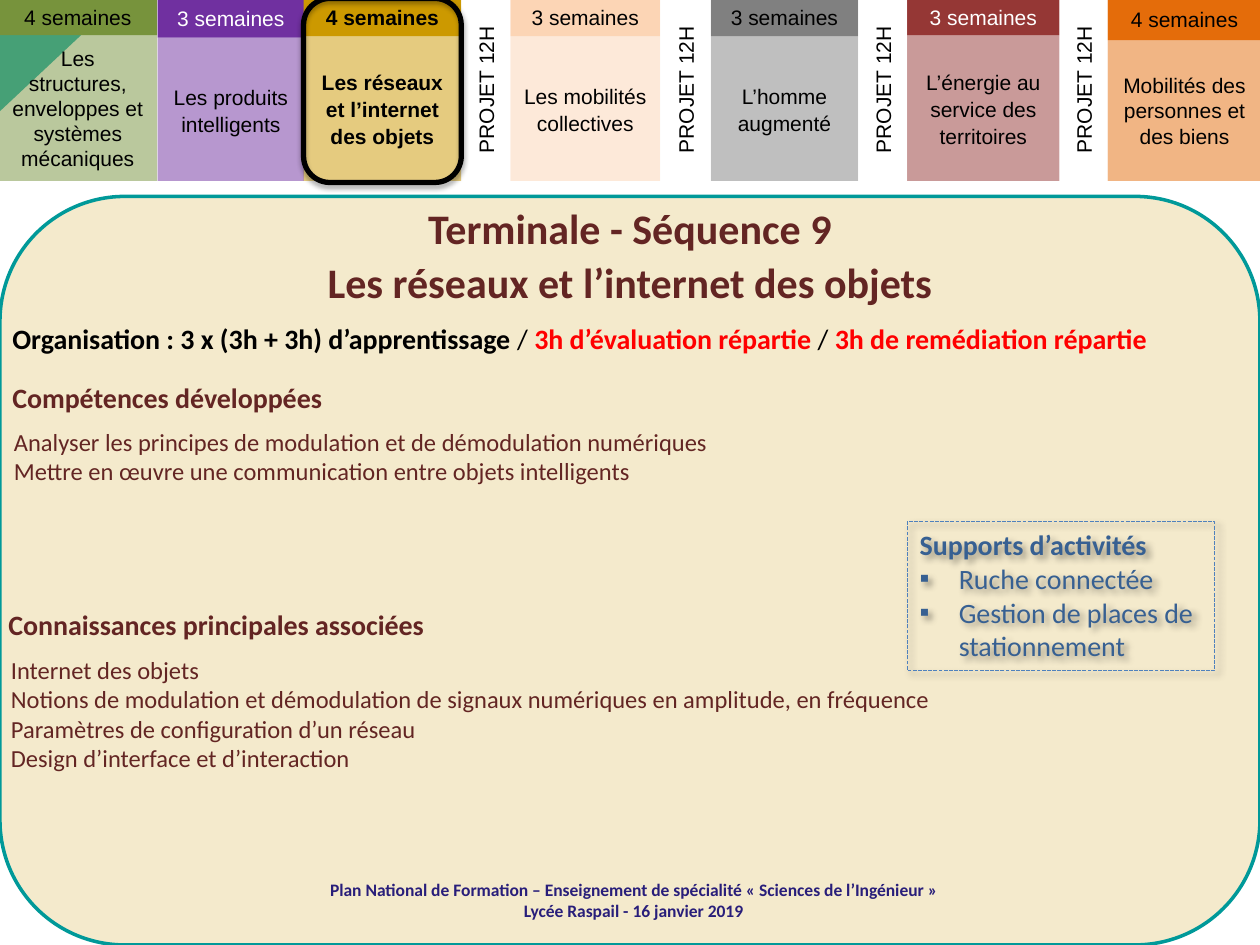
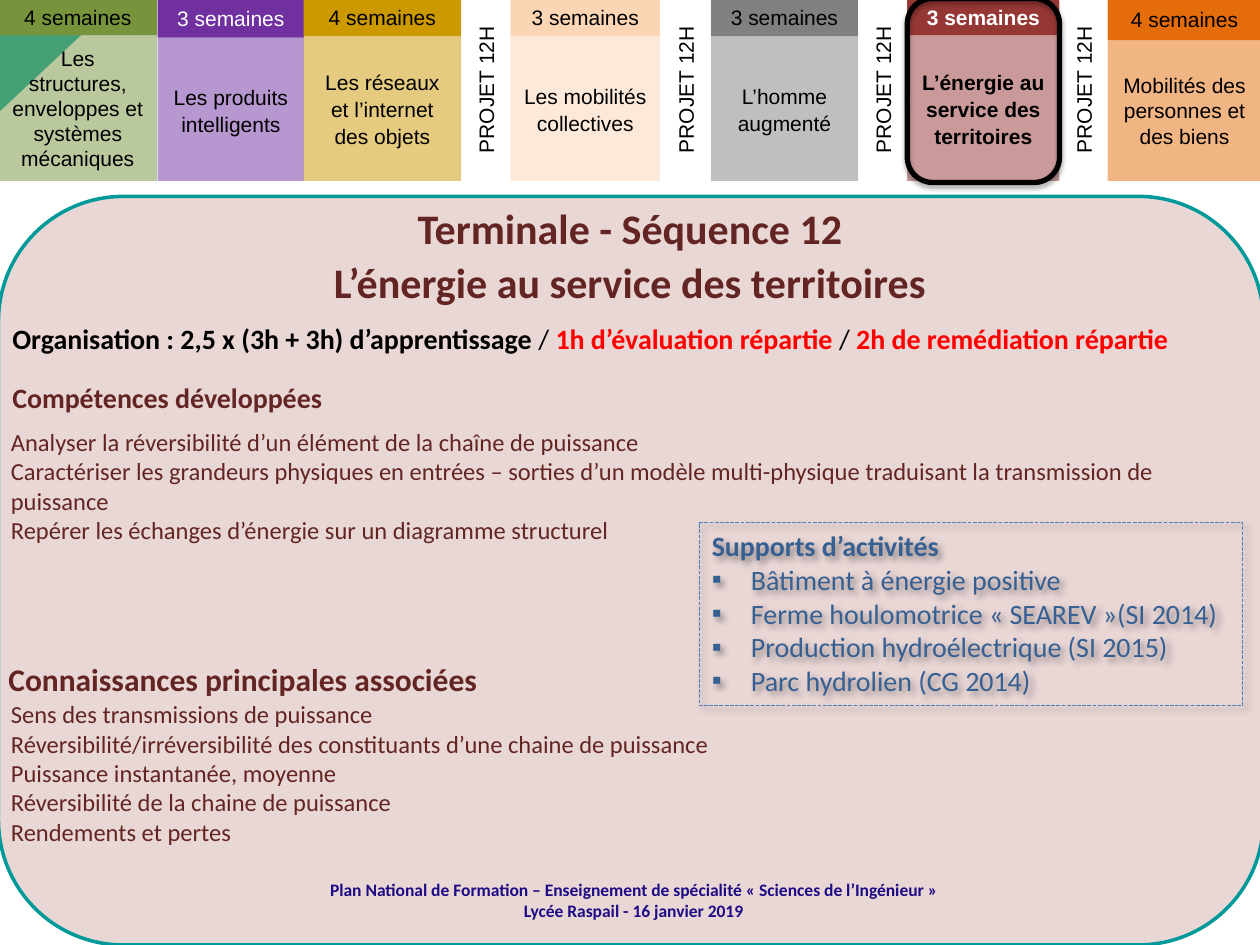
from dataclasses import dataclass

from lxml.etree import SubElement
from pptx import Presentation
from pptx.dml.color import RGBColor
from pptx.enum.dml import MSO_LINE
from pptx.enum.shapes import MSO_SHAPE
from pptx.enum.text import MSO_ANCHOR, PP_ALIGN
from pptx.oxml.ns import qn
from pptx.util import Cm, Pt

WIDTH, HEIGHT = 25.4, 19.05
BAND_TOP, BAND_BOTTOM = -0.03, 3.65
PANEL_TOP = 3.96


@dataclass(frozen=True)
class Theme:
    body_font: str = "Calibri"
    band_font: str = "Arial"
    title_size: int = 24
    heading_size: int = 16
    large_heading_size: int = 18
    text_size: int = 14
    band_size: int = 12
    footer_size: int = 10
    black: str = "000000"
    white: str = "FFFFFF"
    maroon: str = "632523"
    red: str = "FF0000"
    navy: str = "000099"
    support_text: str = "376092"
    support_line: str = "4F81BD"
    panel_line: str = "009999"
    corner: str = "16AEB2"


@dataclass(frozen=True)
class Column:
    left: float
    width: float
    head_height: float
    color: str
    weeks: int
    topic: str
    head_text: str = Theme.black
    spacing: float = 1.07

    @property
    def right(self):
        return self.left + self.width


@dataclass(frozen=True)
class Sequence:
    number: int
    column: int
    panel: tuple  # left, width
    lessons: str
    evaluation: str
    remediation: str
    skills: tuple
    skills_box: tuple  # left, height
    knowledge: tuple
    knowledge_heading: tuple  # top, height, size
    knowledge_box: tuple  # top, height
    supports: tuple
    supports_box: tuple  # left, top, width, height


COLUMNS = (
    Column(-0.03, 3.2, 0.74, "77933C", 4, "Les structures, enveloppes et systèmes mécaniques", spacing=1.0),
    Column(3.18, 2.95, 0.79, "7030A0", 3, "Les produits intelligents", Theme.white),
    Column(6.12, 3.18, 0.76, "CC9900", 4, "Les réseaux et l’internet des objets"),
    Column(10.29, 3.02, 0.76, "FCD5B5", 3, "Les mobilités collectives"),
    Column(14.33, 2.97, 0.76, "808080", 3, "L’homme augmenté"),
    Column(18.29, 3.07, 0.74, "953735", 3, "L’énergie au service des territoires", Theme.white),
    Column(22.33, 3.1, 0.84, "E46C0A", 4, "Mobilités des personnes et des biens", spacing=1.0),
)

SEQUENCES = (
    Sequence(
        number=9, column=2, panel=(0, WIDTH),
        lessons="3", evaluation="3h", remediation="3h",
        skills=("Analyser les principes de modulation et de démodulation numériques",
                "Mettre en œuvre une communication entre objets intelligents"),
        skills_box=(0.03, 1.45),
        knowledge=("Internet des objets",
                   "Notions de modulation et démodulation de signaux numériques en amplitude, en fréquence",
                   "Paramètres de configuration d’un réseau",
                   "Design d’interface et d’interaction"),
        knowledge_heading=(12.12, 0.94, Theme.heading_size),
        knowledge_box=(13.08, 2.64),
        supports=("Ruche connectée", "Gestion de places de stationnement"),
        supports_box=(18.29, 10.52, 6.2, 3),
    ),
    Sequence(
        number=12, column=5, panel=(-0.03, 25.5),
        lessons="2,5", evaluation="1h", remediation="2h",
        skills=("Analyser la réversibilité d’un élément de la chaîne de puissance",
                "Caractériser les grandeurs physiques en entrées – sorties d’un modèle "
                "multi-physique traduisant la transmission de puissance",
                "Repérer les échanges d’énergie sur un diagramme structurel"),
        skills_box=(-0.03, 2.64),
        knowledge=("Sens des transmissions de puissance",
                   "Réversibilité/irréversibilité des constituants d’une chaine de puissance",
                   "Puissance instantanée, moyenne",
                   "Réversibilité de la chaine de puissance",
                   "Rendements et pertes"),
        knowledge_heading=(13.18, 1.02, Theme.large_heading_size),
        knowledge_box=(13.97, 3.25),
        supports=("Bâtiment à énergie positive",
                  "Ferme houlomotrice « SEAREV »(SI 2014)",
                  "Production hydroélectrique (SI 2015)",
                  "Parc hydrolien (CG 2014)"),
        supports_box=(14.1, 10.54, 10.95, 3.68),
    ),
)


class SlideBuilder:
    def __init__(self, presentation, theme):
        self.presentation = presentation
        self.theme = theme
        self.slide = None

    def new_slide(self):
        self.slide = self.presentation.slides.add_slide(self.presentation.slide_layouts[6])

    def shape(self, kind, left, top, width, height, fill=None, opacity=100, line=None, line_width=1):
        shape = self.slide.shapes.add_shape(kind, Cm(left), Cm(top), Cm(width), Cm(height))
        shape.shadow.inherit = False
        if fill:
            shape.fill.solid()
            shape.fill.fore_color.rgb = RGBColor.from_string(fill)
            if opacity < 100:
                color = shape.element.spPr.find(qn("a:solidFill"))[0]
                SubElement(color, qn("a:alpha"), val=str(opacity * 1000))
        else:
            shape.fill.background()
        if line:
            shape.line.color.rgb = RGBColor.from_string(line)
            shape.line.width = Pt(line_width)
        else:
            shape.line.fill.background()
        return shape

    def drop_shadow(self, shape, opacity, blur, distance, angle):
        effects = shape.element.spPr.find(qn("a:effectLst"))
        shadow = SubElement(effects, qn("a:outerShdw"), blurRad=str(Pt(blur)), dist=str(Pt(distance)),
                            dir=str(angle * 60000), algn="ctr", rotWithShape="0")
        color = SubElement(shadow, qn("a:srgbClr"), val=self.theme.black)
        SubElement(color, qn("a:alpha"), val=str(opacity * 1000))

    def style(self, paragraph, size, color=None, bold=None, font=None, align=PP_ALIGN.LEFT, spacing=None):
        paragraph.alignment = align
        if spacing:
            paragraph.line_spacing = spacing
        paragraph.font.name = font or self.theme.body_font
        paragraph.font.size = Pt(size)
        paragraph.font.bold = bold
        if color:
            paragraph.font.color.rgb = RGBColor.from_string(color)

    def set_lines(self, shape, lines, anchor=MSO_ANCHOR.TOP, **style):
        """Fill a shape with one paragraph per line and return the paragraphs."""
        frame = shape.text_frame
        frame.word_wrap = True
        frame.vertical_anchor = anchor
        frame.text = "\n".join(lines)
        for paragraph in frame.paragraphs:
            self.style(paragraph, **style)
        return frame.paragraphs

    def text(self, left, top, width, height, lines, **style):
        box = self.slide.shapes.add_textbox(Cm(left), Cm(top), Cm(width), Cm(height))
        return self.set_lines(box, lines, **style)

    def heading(self, left, top, height, text, size):
        self.text(left, top, WIDTH, height, [text], size=size, color=self.theme.maroon, bold=True)

    def items(self, left, top, height, lines):
        self.text(left, top, WIDTH, height, lines, size=self.theme.text_size, color=self.theme.maroon)

    def band_cell(self, left, top, width, height, fill, text, opacity=100, color=None, bold=False, spacing=None):
        cell = self.shape(MSO_SHAPE.RECTANGLE, left, top, width, height, fill, opacity)
        self.set_lines(cell, [text], anchor=MSO_ANCHOR.MIDDLE, size=self.theme.band_size,
                       color=color or self.theme.black, bold=bold, font=self.theme.band_font,
                       align=PP_ALIGN.CENTER, spacing=spacing)
        return cell

    def band(self, current):
        """Draw the year plan, with a project strip in each gap and the current column framed."""
        for index, column in enumerate(COLUMNS):
            bold = index == current
            body_top = BAND_TOP + column.head_height
            self.band_cell(column.left, BAND_TOP, column.width, column.head_height, column.color,
                           f"{column.weeks} semaines", color=column.head_text, bold=bold)
            self.band_cell(column.left, body_top, column.width, BAND_BOTTOM - body_top, column.color,
                           column.topic, opacity=50, bold=bold, spacing=column.spacing)
        for column, following in zip(COLUMNS, COLUMNS[1:]):
            gap = following.left - column.right
            if gap > 0.5:
                strip = self.band_cell(column.right, BAND_TOP, gap, BAND_BOTTOM - BAND_TOP,
                                       self.theme.white, "PROJET 12H", opacity=50)
                strip.element.txBody.find(qn("a:bodyPr")).set("vert", "vert270")
        framed = COLUMNS[current]
        frame = self.shape(MSO_SHAPE.ROUNDED_RECTANGLE, framed.left, BAND_TOP, framed.width, 3.71,
                           line=self.theme.black, line_width=3)
        self.drop_shadow(frame, 35, 3.1, 1.8, 90)

    def background(self):
        corner = self.shape(MSO_SHAPE.ISOSCELES_TRIANGLE, 0, 0, 2.39, 2.24, self.theme.corner)
        corner.adjustments[0] = 1
        corner.rotation = 180
        self.text(6.05, 17.64, 13.44, 1.02,
                  ["Plan National de Formation – Enseignement de spécialité « Sciences de l’Ingénieur »",
                   "Lycée Raspail - 16 janvier 2019"],
                  anchor=MSO_ANCHOR.MIDDLE, size=self.theme.footer_size, color=self.theme.navy,
                  bold=True, align=PP_ALIGN.CENTER)

    def title(self, number, topic):
        paragraphs = self.text(0, PANEL_TOP, WIDTH, 2.39, [f"Terminale - Séquence {number}", topic],
                               size=self.theme.title_size, color=self.theme.maroon, bold=True,
                               align=PP_ALIGN.CENTER)
        paragraphs[1].line_spacing = 1.07

    def organisation(self, sequence):
        theme = self.theme
        paragraph = self.text(0, 6.35, WIDTH, 0.94, [""], size=theme.heading_size)[0]
        for text, color, bold in (
            (f"Organisation : {sequence.lessons} x (3h + 3h) d’apprentissage ", theme.black, True),
            ("/ ", theme.black, False),
            (f"{sequence.evaluation} d’évaluation répartie ", theme.red, True),
            ("/ ", theme.black, False),
            (f"{sequence.remediation} de remédiation répartie", theme.red, True),
        ):
            run = paragraph.add_run()
            run.text = text
            run.font.bold = bold
            run.font.color.rgb = RGBColor.from_string(color)

    def supports(self, box, lines):
        theme = self.theme
        shape = self.shape(MSO_SHAPE.RECTANGLE, *box, line=theme.support_line, line_width=0.75)
        shape.line.dash_style = MSO_LINE.SQUARE_DOT
        self.drop_shadow(shape, 40, 4, 3, 45)
        frame = shape.text_frame
        frame.text = "\n".join(lines)
        for paragraph in frame.paragraphs[1:]:
            properties = paragraph._p.get_or_add_pPr()
            properties.set("marL", str(Cm(0.79)))
            properties.set("indent", str(-Cm(0.79)))
            SubElement(properties, qn("a:buFont"), typeface=theme.band_font)
            SubElement(properties, qn("a:buChar"), char="▪")
        frame.word_wrap = True
        frame.vertical_anchor = MSO_ANCHOR.TOP
        for index, paragraph in enumerate(frame.paragraphs):
            self.style(paragraph, theme.heading_size, theme.support_text, bold=index == 0)

    def sequence(self, sequence):
        column = COLUMNS[sequence.column]
        panel_left, panel_width = sequence.panel
        skills_left, skills_height = sequence.skills_box
        heading_top, heading_height, heading_size = sequence.knowledge_heading
        self.new_slide()
        self.background()
        self.shape(MSO_SHAPE.ROUNDED_RECTANGLE, panel_left, PANEL_TOP, panel_width, HEIGHT - PANEL_TOP,
                   column.color, 20, self.theme.panel_line, 2)
        self.title(sequence.number, column.topic)
        self.organisation(sequence)
        self.heading(0, 7.54, 0.94, "Compétences développées", self.theme.heading_size)
        self.items(skills_left, 8.48, skills_height, sequence.skills)
        self.heading(-0.08, heading_top, heading_height, "Connaissances principales associées", heading_size)
        self.items(-0.03, *sequence.knowledge_box, sequence.knowledge)
        self.band(sequence.column)
        self.supports(sequence.supports_box, ("Supports d’activités", *sequence.supports))


def main():
    presentation = Presentation()
    presentation.slide_width, presentation.slide_height = Cm(WIDTH), Cm(HEIGHT)
    builder = SlideBuilder(presentation, Theme())
    for sequence in SEQUENCES:
        builder.sequence(sequence)
    presentation.save("out.pptx")


if __name__ == "__main__":
    main()
